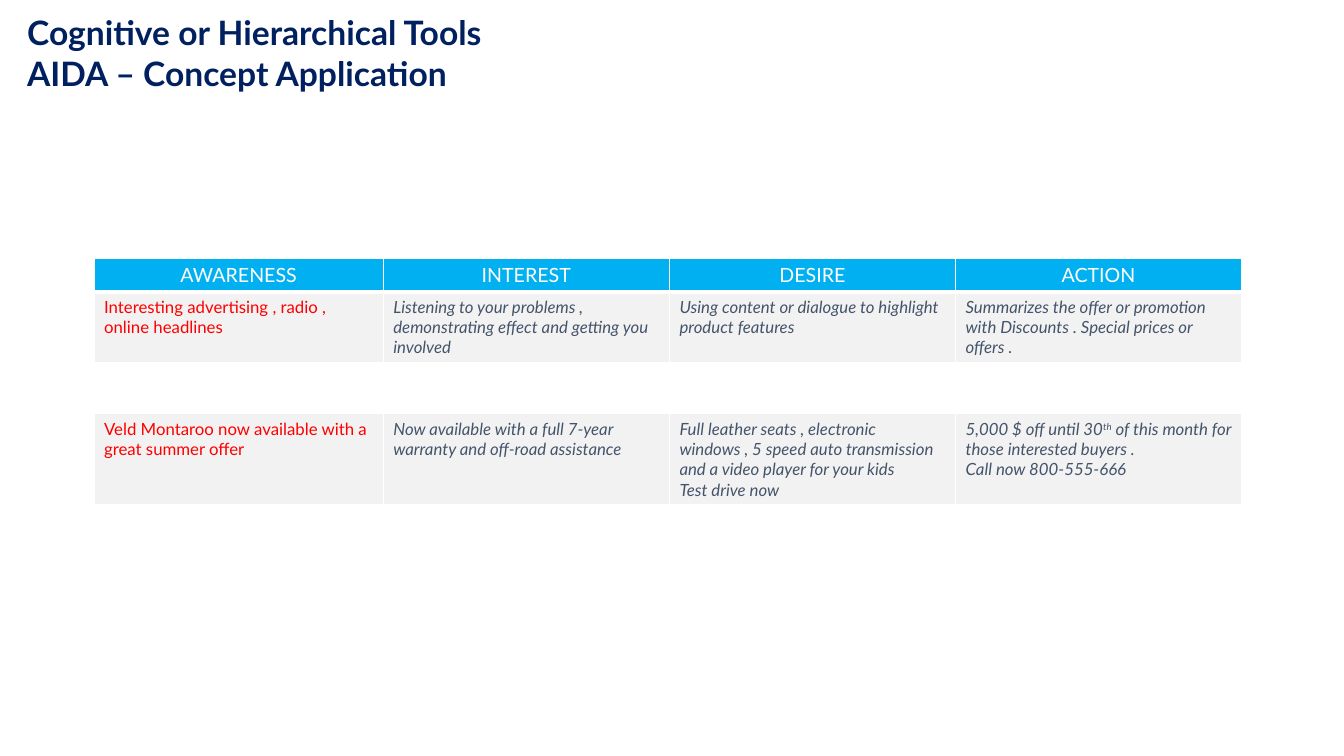
from lxml import etree
from pptx import Presentation
from pptx.dml.color import RGBColor
from pptx.enum.text import MSO_ANCHOR, MSO_AUTO_SIZE, PP_ALIGN
from pptx.oxml.ns import qn
from pptx.util import Cm, Pt

CENTER, LEFT = PP_ALIGN.CENTER, PP_ALIGN.LEFT
TOP, MIDDLE = MSO_ANCHOR.TOP, MSO_ANCHOR.MIDDLE
NO_FIT = MSO_AUTO_SIZE.NONE

NAVY = RGBColor(0x00, 0x20, 0x60)
SKY = RGBColor(0x00, 0xB0, 0xF0)
PALE = RGBColor(0xF2, 0xF2, 0xF2)
WHITE = RGBColor(0xFF, 0xFF, 0xFF)
RED = RGBColor(0xFF, 0x00, 0x00)
SLATE = RGBColor(0x44, 0x54, 0x6A)
FONT = "Lato"

# Text between carets is superscript; a line break starts a new paragraph.
ROWS = [
    ["AWARENESS", "INTEREST", "DESIRE", "ACTION"],
    ["Interesting advertising , radio , online headlines",
     "Listening to your problems , demonstrating effect and getting you involved",
     "Using content or dialogue to highlight product features",
     "Summarizes the offer or promotion with Discounts . Special prices or offers ."],
    ["", "", "", ""],
    ["Veld Montaroo now available with a great summer offer",
     "Now available with a full 7-year warranty and off-road assistance",
     "Full leather seats , electronic windows , 5 speed auto transmission "
     "and a video player for your kids\nTest drive now",
     "5,000 $ off until 30^th^ of this month for those interested buyers .\n"
     "Call now 800-555-666"],
]
ROW_FILLS = [SKY, PALE, WHITE, PALE]
ROW_HEIGHTS = [0.85, 1.75, 1.3, 2.28]
COLUMN_WIDTHS = [7.29, 7.21, 7.21, 7.21]


def add_borders(cell, bottom_width):
    """Draw white cell edges, 1 pt wide except for the bottom one."""
    properties = cell._tc.get_or_add_tcPr()
    for edge, width in (("L", 1), ("R", 1), ("T", 1), ("B", bottom_width)):
        line = etree.SubElement(properties, qn(f"a:ln{edge}"), w=str(Pt(width)))
        fill = etree.SubElement(line, qn("a:solidFill"))
        etree.SubElement(fill, qn("a:srgbClr"), val=str(WHITE))


def format_font(font, size, color, bold=False, italic=False):
    font.name = FONT
    font.size = Pt(size)
    font.color.rgb = color
    font.bold = bold
    font.italic = italic


deck = Presentation()
deck.slide_width = Cm(33.87)
deck.slide_height = Cm(19.05)
page = deck.slides.add_slide(deck.slide_layouts[5])

# Title
title = page.shapes.title
title.left, title.top, title.width, title.height = Cm(0.43), Cm(0.18), Cm(26.75), Cm(2.31)
title_frame = title.text_frame
title_frame.text = "Cognitive or Hierarchical Tools\nAIDA – Concept Application"
title_frame.auto_size = NO_FIT
title_frame.word_wrap = True
title_frame.vertical_anchor = TOP
for para in title_frame.paragraphs:
    para.alignment = LEFT
    for span in para.runs:
        format_font(span.font, 24, NAVY, bold=True)

# AIDA table
table = page.shapes.add_table(
    len(ROWS), len(COLUMN_WIDTHS), Cm(2.37), Cm(6.5),
    Cm(sum(COLUMN_WIDTHS)), Cm(sum(ROW_HEIGHTS))).table
table.horz_banding = False
for column, width in zip(table.columns, COLUMN_WIDTHS):
    column.width = Cm(width)

for row_index, texts in enumerate(ROWS):
    table.rows[row_index].height = Cm(ROW_HEIGHTS[row_index])
    is_header = row_index == 0
    for column_index, text in enumerate(texts):
        cell = table.cell(row_index, column_index)
        add_borders(cell, 3 if is_header else 1)
        cell.fill.solid()
        cell.fill.fore_color.rgb = ROW_FILLS[row_index]
        cell.vertical_anchor = MIDDLE if is_header else TOP
        if not text:
            continue
        cell.text_frame.text = "\n".join(line.split("^")[0] for line in text.split("\n"))
        for para, line in zip(cell.text_frame.paragraphs, text.split("\n")):
            para.alignment = CENTER if is_header else LEFT
            for piece in line.split("^")[1:]:
                para.add_run().text = piece
            for span_index, span in enumerate(para.runs):
                if is_header:
                    format_font(span.font, 14, WHITE)
                elif column_index == 0:
                    format_font(span.font, 12, RED)
                else:
                    format_font(span.font, 12, SLATE, italic=True)
                if span_index % 2:
                    span._r.get_or_add_rPr().set("baseline", "30000")

deck.save("out.pptx")
